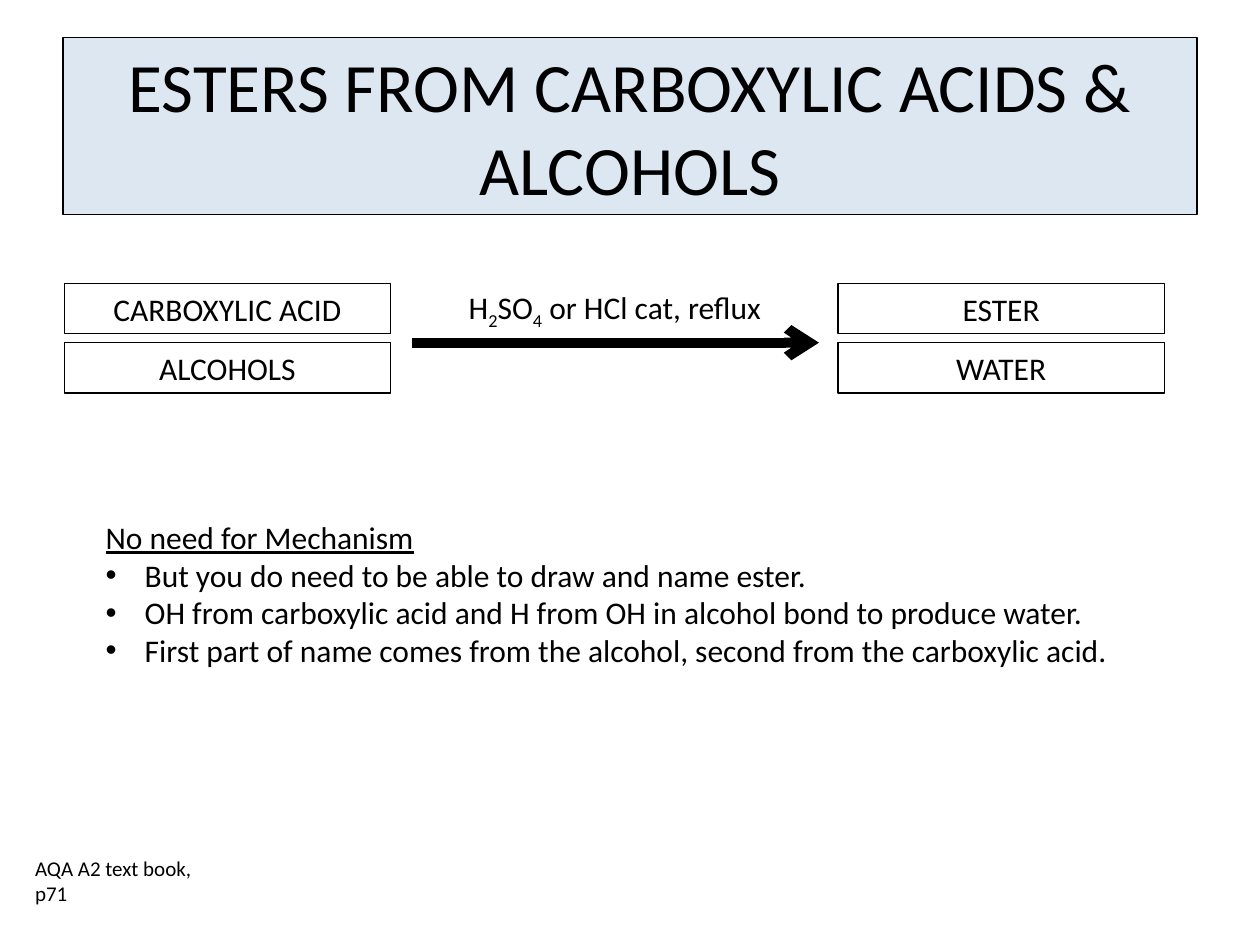
from lxml.etree import SubElement
from pptx import Presentation
from pptx.dml.color import RGBColor
from pptx.enum.shapes import MSO_CONNECTOR, MSO_SHAPE
from pptx.enum.text import MSO_ANCHOR, MSO_AUTO_SIZE, PP_ALIGN
from pptx.oxml.ns import qn
from pptx.util import Inches, Pt

BLACK = RGBColor(0x00, 0x00, 0x00)
BLUE = RGBColor(0x4F, 0x81, 0xBD)

BOX_SIZE = (2.59, 0.4)
ROWS = (2.25, 2.72)
COLUMNS = {
    0.51: ("CARBOXYLIC ACID", "ALCOHOLS"),
    6.65: ("ESTER", "WATER"),
}
CONDITIONS = (("H", 0), ("2", -25), ("SO", 0), ("4", -25), (" or HCl cat, reflux", 0))
NOTES = (
    "But you do need to be able to draw and name ester.",
    "OH from carboxylic acid and H from OH in alcohol bond to produce water.",
    "First part of name comes from the alcohol, second from the carboxylic acid.",
)


class SlideBuilder:
    font_name = "Calibri"
    line_width = Pt(0.75)

    def __init__(self, prs):
        self.slide = prs.slides.add_slide(prs.slide_layouts[5])

    def add_run(self, p, text, size=18, baseline=0, **extra):
        r = p.add_run()
        r.text = text
        for name, value in {"name": self.font_name, "size": Pt(size), **extra}.items():
            setattr(r.font, name, value)
        r.font.color.rgb = BLACK
        if baseline:
            r._r.get_or_add_rPr().set("baseline", str(baseline * 1000))

    def outline(self, shape):
        shape.line.color.rgb = BLACK
        shape.line.width = self.line_width

    def title(self, text, left, top, width, height):
        s = self.slide.shapes.title
        place = {"left": left, "top": top, "width": width, "height": height}
        for name, value in place.items():
            setattr(s, name, Inches(value))
        s.fill.solid()
        s.fill.fore_color.rgb = BLUE
        color = s.fill._xPr.find(qn("a:solidFill"))[0]
        SubElement(color, qn("a:alpha"), val="19000")
        self.outline(s)
        tf = s.text_frame
        tf.auto_size = MSO_AUTO_SIZE.NONE
        tf.vertical_anchor = MSO_ANCHOR.MIDDLE
        p = tf.paragraphs[0]
        p.alignment = PP_ALIGN.CENTER
        self.add_run(p, text, size=39.6)

    def box(self, text, left, top, width, height):
        s = self.slide.shapes.add_shape(
            MSO_SHAPE.RECTANGLE, *map(Inches, (left, top, width, height)))
        s.shadow.inherit = False
        s.fill.background()
        self.outline(s)
        p = s.text_frame.paragraphs[0]
        p.alignment = PP_ALIGN.CENTER
        self.add_run(p, text)

    def arrow(self, x1, x2, y, width):
        c = self.slide.shapes.add_connector(
            MSO_CONNECTOR.STRAIGHT, *map(Inches, (x1, y, x2, y)))
        c.line.color.rgb = BLACK
        c.line.width = Pt(width)
        SubElement(c.line._get_or_add_ln(), qn("a:tailEnd"), type="arrow")
        SubElement(c._element.spPr, qn("a:effectLst"))

    def text_box(self, left, top, width, height):
        """Add an empty wrapping text box and return its text frame."""
        s = self.slide.shapes.add_textbox(*map(Inches, (left, top, width, height)))
        s.text_frame.word_wrap = True
        return s.text_frame

    def bullet(self, tf, text, indent=0.31):
        p = tf.add_paragraph()
        pPr = p._p.get_or_add_pPr()
        pPr.set("marL", str(Inches(indent)))
        pPr.set("indent", str(-Inches(indent)))
        SubElement(pPr, qn("a:buFont"), typeface="Arial")
        SubElement(pPr, qn("a:buChar"), char="•")
        self.add_run(p, text)


def main():
    prs = Presentation()
    prs.slide_width, prs.slide_height = Inches(10), Inches(7.5)
    b = SlideBuilder(prs)

    b.title("ESTERS FROM CARBOXYLIC ACIDS & ALCOHOLS", 0.5, 0.3, 9, 1.4)
    for left, names in COLUMNS.items():
        for top, name in zip(ROWS, names):
            b.box(name, left, top, *BOX_SIZE)
    b.arrow(3.27, 6.5, 2.72, 5.75)

    p = b.text_box(3.5, 2.24, 2.76, 0.4).paragraphs[0]
    p.alignment = PP_ALIGN.CENTER
    for text, baseline in CONDITIONS:
        b.add_run(p, text, baseline=baseline)

    tf = b.text_box(0.18, 6.74, 1.59, 0.5)
    b.add_run(tf.paragraphs[0], "AQA A2 text book, p71", size=12)

    tf = b.text_box(0.74, 4.06, 8.58, 1.31)
    b.add_run(tf.paragraphs[0], "No need for Mechanism", underline=True)
    for note in NOTES:
        b.bullet(tf, note)

    prs.save("out.pptx")


if __name__ == "__main__":
    main()
